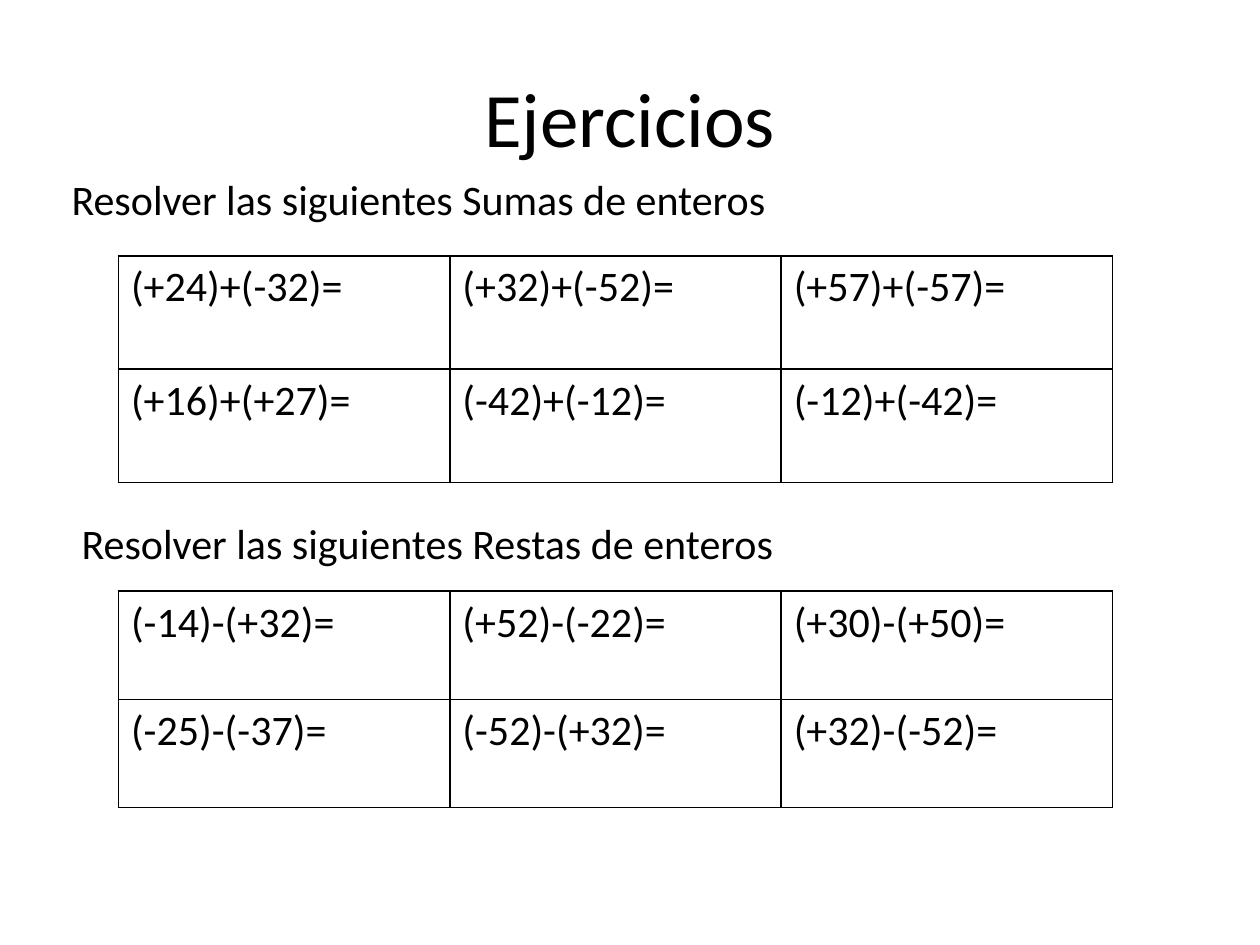
from dataclasses import dataclass

from lxml import etree
from pptx import Presentation
from pptx.dml.color import RGBColor
from pptx.enum.text import MSO_ANCHOR, PP_ALIGN
from pptx.oxml.ns import qn
from pptx.util import Inches, Pt

LEFT, CENTER = PP_ALIGN.LEFT, PP_ALIGN.CENTER
TOP, MIDDLE = MSO_ANCHOR.TOP, MSO_ANCHOR.MIDDLE


@dataclass(frozen=True)
class Theme:
    """Colours, font and sizes of the slide."""
    font: str = "Calibri"
    ink: str = "000000"
    paper: str = "FFFFFF"
    title: int = 44
    body: int = 24
    border: int = 1


THEME = Theme()
SLIDE_W, SLIDE_H = 10, 7.5
TABLE_X, TABLE_W = 0.94, 7.89

SUMS = [
    ["(+24)+(-32)=", "(+32)+(-52)=", "(+57)+(-57)="],
    ["(+16)+(+27)=", "(-42)+(-12)=", "(-12)+(-42)="],
]
DIFFERENCES = [
    ["(-14)-(+32)=", "(+52)-(-22)=", "(+30)-(+50)="],
    ["(-25)-(-37)=", "(-52)-(+32)=", "(+32)-(-52)="],
]


def write(tf, text, size=THEME.body, align=LEFT):
    """Write one formatted line into a text frame."""
    tf.word_wrap = True
    p = tf.paragraphs[0]
    p.alignment = align
    r = p.add_run()
    r.text = text
    r.font.name = THEME.font
    r.font.size = Pt(size)
    r.font.color.rgb = RGBColor.from_string(THEME.ink)


def add_line(s, box, text, anchor=TOP, **style):
    """Place a text box holding one line."""
    tf = s.shapes.add_textbox(*map(Inches, box)).text_frame
    tf.vertical_anchor = anchor
    write(tf, text, **style)


def add_borders(cell):
    """Draw a solid line on all four sides of a cell."""
    tc_pr = cell._tc.get_or_add_tcPr()
    for i, side in enumerate(("a:lnL", "a:lnR", "a:lnT", "a:lnB")):
        ln = etree.Element(qn(side), w=str(Pt(THEME.border)))
        fill = etree.SubElement(ln, qn("a:solidFill"))
        etree.SubElement(fill, qn("a:srgbClr"), val=THEME.ink)
        tc_pr.insert(i, ln)


def add_exercises(s, box, rows):
    """Fill the box with an evenly divided table of exercises."""
    frame = s.shapes.add_table(len(rows), len(rows[0]), *map(Inches, box))
    table = frame.table
    table.first_row = table.horz_banding = False
    for row, texts in zip(table.rows, rows):
        for cell, text in zip(row.cells, texts):
            cell.fill.solid()
            cell.fill.fore_color.rgb = RGBColor.from_string(THEME.paper)
            write(cell.text_frame, text)
            add_borders(cell)


def build_slide(prs):
    """Build the exercise slide with its title and two sections."""
    s = prs.slides.add_slide(prs.slide_layouts[6])
    add_line(s, (0.5, 0.3, 9, 1.25), "Ejercicios",
             anchor=MIDDLE, size=THEME.title, align=CENTER)
    sections = [
        ("Sumas", (0.47, 1.33, 9.06, 0.5), 2.03, 1.8, SUMS),
        ("Restas", (0.55, 4.06, 9.06, 0.5), 4.69, 1.72, DIFFERENCES),
    ]
    for name, heading, y, h, rows in sections:
        add_line(s, heading, f"Resolver las siguientes {name} de enteros")
        add_exercises(s, (TABLE_X, y, TABLE_W, h), rows)


def main():
    """Create and save the presentation."""
    prs = Presentation()
    prs.slide_width, prs.slide_height = Inches(SLIDE_W), Inches(SLIDE_H)
    build_slide(prs)
    prs.save("out.pptx")


if __name__ == "__main__":
    main()
